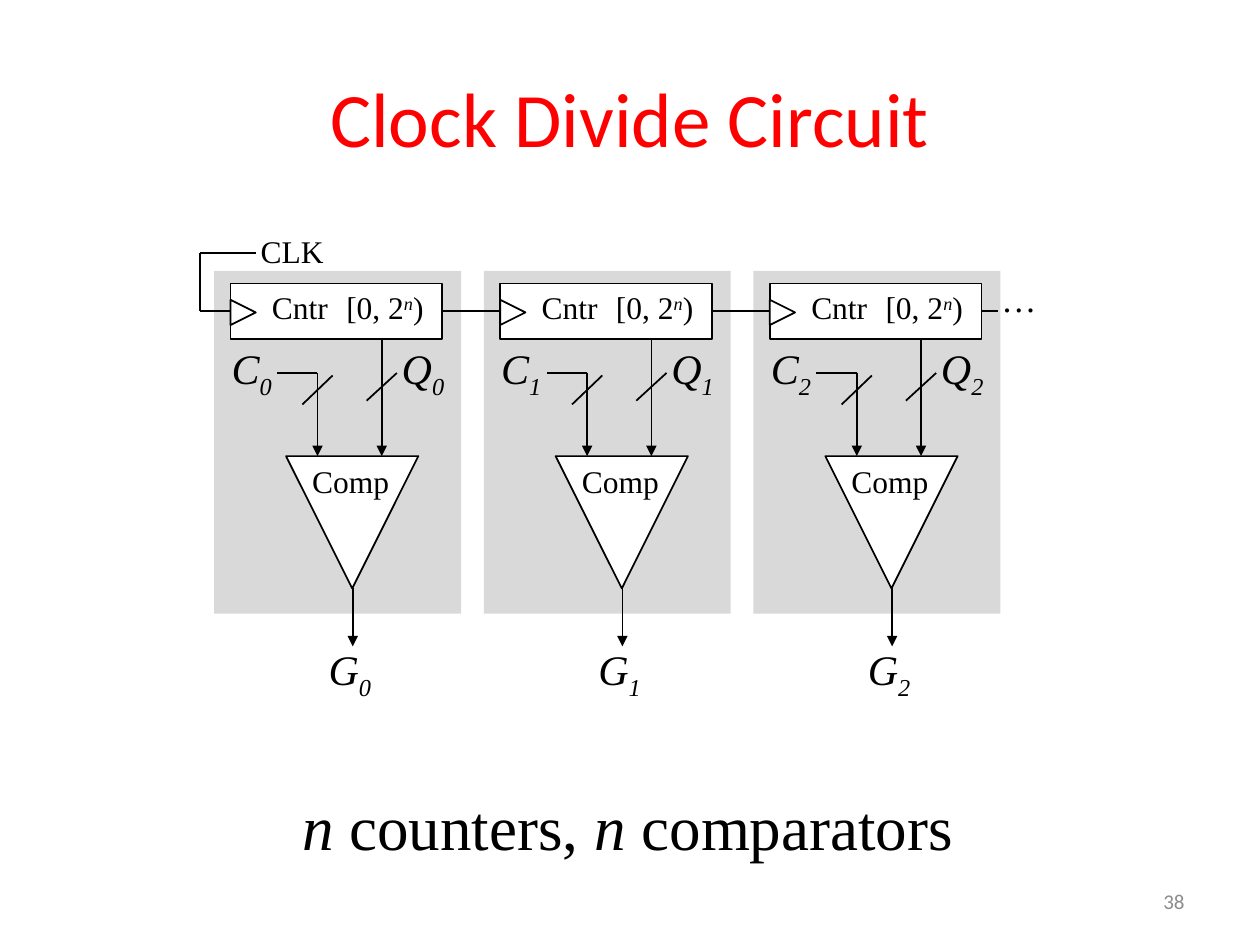
"""Build the clock divide circuit slide."""
from dataclasses import dataclass

from pptx import Presentation
from pptx.dml.color import RGBColor
from pptx.enum.shapes import MSO_CONNECTOR, MSO_SHAPE
from pptx.enum.text import MSO_ANCHOR, PP_ALIGN
from pptx.oxml.ns import qn
from pptx.util import Inches, Pt
from lxml.etree import SubElement


@dataclass(frozen=True)
class Theme:
    """Colours, fonts and type sizes of the slide."""
    title: RGBColor = RGBColor(0xFF, 0x00, 0x00)
    ink: RGBColor = RGBColor(0x00, 0x00, 0x00)
    paper: RGBColor = RGBColor(0xFF, 0xFF, 0xFF)
    panel: RGBColor = RGBColor(0xD9, 0xD9, 0xD9)
    muted: RGBColor = RGBColor(0x8C, 0x8C, 0x8C)
    heading_font: str = "Calibri"
    body_font: str = "Times New Roman"
    title_size: int = 44
    summary_size: int = 36
    signal_size: int = 24
    dots_size: int = 20
    label_size: int = 18
    number_size: int = 12
    line_width: int = 1


THEME = Theme()
STAGE_COUNT = 3
STAGE_PITCH = 2.14
SUPERSCRIPT, SUBSCRIPT = 30000, -25000


def apply_format(target, values):
    """Set each named attribute of the target."""
    for name, value in values.items():
        setattr(target, name, value)


def place(box, left, top, width, height):
    """Move and size a box, in inches."""
    names = ("left", "top", "width", "height")
    apply_format(box, dict(zip(names, map(Inches, (left, top, width, height)))))


def write(box, spans, size, font=THEME.body_font, color=THEME.ink,
          align=PP_ALIGN.LEFT, anchor=MSO_ANCHOR.TOP, wrap=True):
    """Fill a box with one paragraph of (text, italic, baseline) spans."""
    apply_format(box.text_frame, {"word_wrap": wrap, "vertical_anchor": anchor})
    para = box.text_frame.paragraphs[0]
    para.alignment = align
    for text, italic, baseline in spans:
        span = para.add_run()
        span.text = text
        apply_format(span.font, {"name": font, "size": Pt(size), "italic": italic})
        span.font.color.rgb = color
        if baseline:
            span._r.get_or_add_rPr().set("baseline", str(baseline))


def add_text(page, frame, spans, size, **options):
    """Add a text box holding the given spans."""
    box = page.shapes.add_textbox(*map(Inches, frame))
    write(box, spans, size, **options)


def add_signal(page, left, top, letter, index):
    """Add an italic signal name with a subscript index."""
    spans = [(letter, True, 0), (str(index), True, SUBSCRIPT)]
    add_text(page, (left, top, 0.74, 0.81), spans, THEME.signal_size)


def add_outline(page, kind, frame, fill=THEME.paper, rotation=0, outlined=True):
    """Add a filled preset shape, outlined unless told otherwise."""
    shape = page.shapes.add_shape(kind, *map(Inches, frame))
    shape.shadow.inherit = False
    shape.rotation = rotation
    shape.fill.solid()
    shape.fill.fore_color.rgb = fill
    if outlined:
        shape.line.color.rgb = THEME.ink
        shape.line.width = Pt(THEME.line_width)
    else:
        shape.line.fill.background()
    return shape


def add_wire(page, start, end, arrow=False):
    """Add a straight wire between two points."""
    wire = page.shapes.add_connector(
        MSO_CONNECTOR.STRAIGHT, *map(Inches, (*start, *end)))
    wire.line.color.rgb = THEME.ink
    wire.line.width = Pt(THEME.line_width)
    if arrow:
        SubElement(wire.line._get_or_add_ln(), qn("a:tailEnd"), type="triangle")
    SubElement(wire._element.spPr, qn("a:effectLst"))
    return wire


def add_stage(page, index):
    """Add one counter and comparator stage and return its counter."""
    x = 1.7 + index * STAGE_PITCH
    add_outline(page, MSO_SHAPE.RECTANGLE, (x, 2.15, 1.96, 2.72),
                fill=THEME.panel, outlined=False)

    counter = add_outline(page, MSO_SHAPE.RECTANGLE, (x + 0.13, 2.25, 1.68, 0.44))
    add_outline(page, MSO_SHAPE.ISOSCELES_TRIANGLE, (x + 0.13, 2.38, 0.2, 0.2), rotation=90)
    add_text(page, (x + 0.36, 2.24, 0.81, 0.71), [("Cntr", False, 0)], THEME.label_size)
    add_text(page, (x + 0.95, 2.24, 0.83, 0.4),
             [("[0, 2", False, 0), ("n", True, SUPERSCRIPT), (")", False, 0)],
             THEME.label_size, wrap=False)

    add_outline(page, MSO_SHAPE.ISOSCELES_TRIANGLE, (x + 0.57, 3.62, 1.05, 1.05), rotation=180)
    add_text(page, (x + 0.68, 3.62, 1, 0.71), [("Comp", False, 0)], THEME.label_size)

    add_wire(page, (x + 0.5, 2.96), (x + 0.82, 2.96))
    add_wire(page, (x + 0.82, 2.96), (x + 0.82, 3.62), arrow=True)
    add_wire(page, (x + 1.33, 2.69), (x + 1.33, 3.62), arrow=True)
    add_wire(page, (x + 1.1, 4.67), (x + 1.1, 5.13), arrow=True)
    add_wire(page, (x + 0.7, 3.21), (x + 0.94, 2.98))
    add_wire(page, (x + 1.21, 3.18), (x + 1.45, 2.96))

    for letter, offset, top in (("C", 0.04, 2.67), ("Q", 1.39, 2.67), ("G", 0.81, 5.06)):
        add_signal(page, x + offset, top, letter, index)
    return counter


def add_clock(page, counter):
    """Add the clock label and its wire into the first counter."""
    add_text(page, (1.97, 1.79, 0.79, 0.4), [("CLK", False, 0)], THEME.label_size)
    add_wire(page, (2.03, 2.01), (1.59, 2.01))
    add_wire(page, (1.59, 2.01), (1.59, 2.47))
    add_wire(page, (1.59, 2.47), (1.83, 2.47)).end_connect(counter, 1)


def add_chain(page, counters):
    """Join the counters in a row and continue the row with dots."""
    for source, target in zip(counters, counters[1:]):
        wire = add_wire(page, (0, 0), (1, 0))
        wire.begin_connect(source, 3)
        wire.end_connect(target, 1)
    add_wire(page, (7.79, 2.47), (7.92, 2.47)).begin_connect(counters[-1], 3)
    add_text(page, (7.85, 2.15, 1.13, 0.44), [("…", False, 0)], THEME.dots_size)


def add_title(page):
    """Place and fill the title placeholder."""
    title = page.shapes.title
    place(title, 0.5, 0.3, 9, 1.25)
    write(title, [("Clock Divide Circuit", False, 0)], THEME.title_size,
          font=THEME.heading_font, color=THEME.title,
          align=PP_ALIGN.CENTER, anchor=MSO_ANCHOR.MIDDLE)


def main():
    """Build and save the deck."""
    deck = Presentation()
    apply_format(deck, {"slide_width": Inches(10), "slide_height": Inches(7.5)})
    page = deck.slides.add_slide(deck.slide_layouts[5])
    add_title(page)
    counters = [add_stage(page, index) for index in range(STAGE_COUNT)]
    add_clock(page, counters[0])
    add_chain(page, counters)
    add_text(page, (2.3, 6.2, 5.55, 1.31),
             [("n", True, 0), (" counters, ", False, 0),
              ("n", True, 0), (" comparators", False, 0)], THEME.summary_size)
    add_text(page, (7.17, 6.95, 2.33, 0.4), [("38", False, 0)], THEME.number_size,
             font=THEME.heading_font, color=THEME.muted,
             align=PP_ALIGN.RIGHT, anchor=MSO_ANCHOR.MIDDLE)
    deck.save("out.pptx")


if __name__ == "__main__":
    main()
